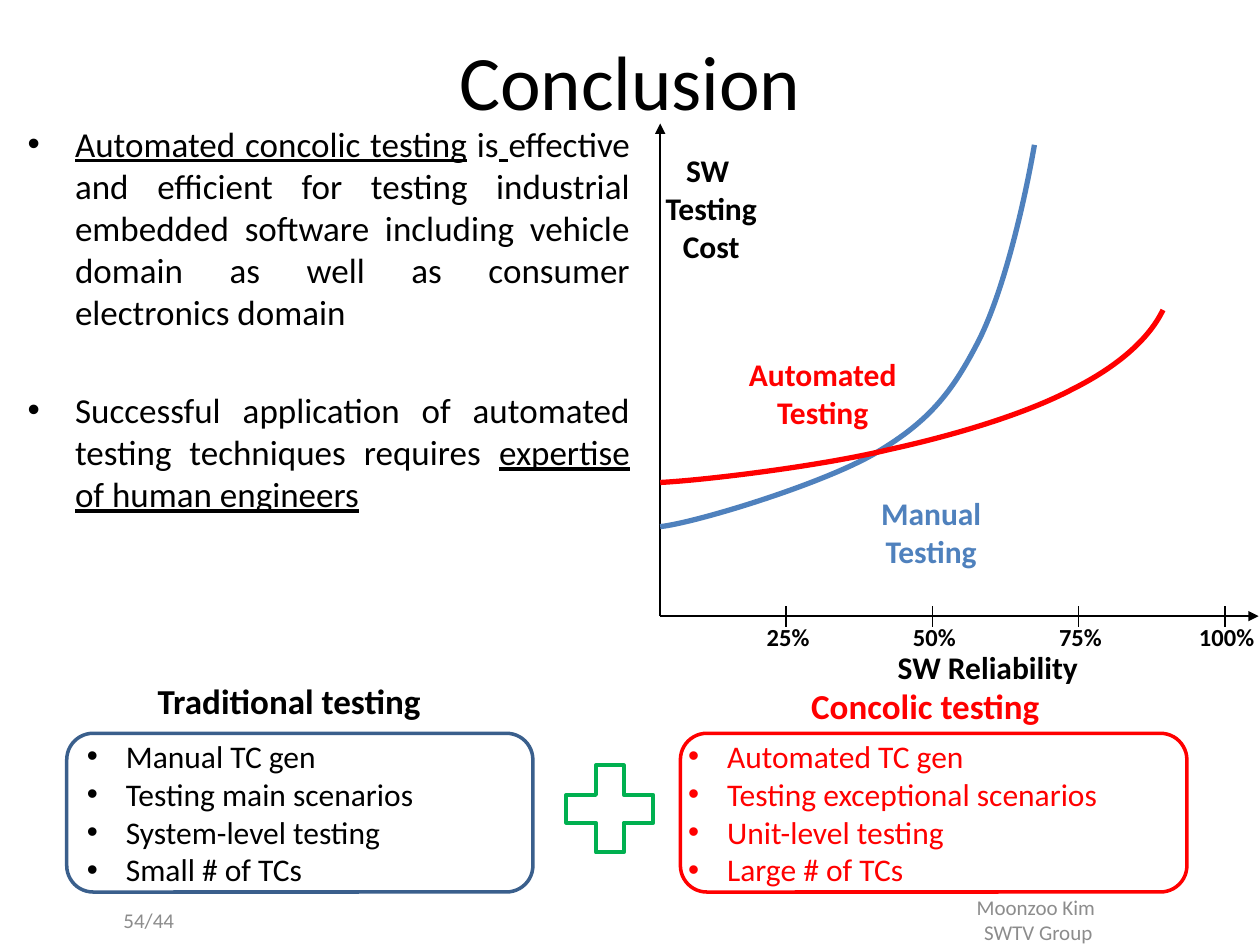
from lxml.etree import SubElement
from pptx import Presentation
from pptx.dml.color import RGBColor
from pptx.enum.shapes import MSO_CONNECTOR, MSO_SHAPE as Preset
from pptx.enum.text import MSO_ANCHOR as Anchor, MSO_AUTO_SIZE as AutoSize, PP_ALIGN as Align
from pptx.oxml.ns import qn
from pptx.util import Emu, Inches, Pt

BLACK, RED, BLUE, NAVY, GREEN, GREY = "000000", "FF0000", "4F81BD", "3A5F8C", "00B050", "8C8C8C"
rgb = RGBColor.from_string

deck = Presentation()
deck.slide_width, deck.slide_height = Inches(10), Inches(7.5)
CELL = deck.slide_width // 1000  # the grid has 1000 columns and 750 rows
slide = deck.slides.add_slide(deck.slide_layouts[1])
shapes = slide.shapes


def cells(*counts):
    return [Emu(round(count * CELL)) for count in counts]


def write(holder, lines, color, frame_format, align=Align.LEFT, **font_format):
    """Fill a shape with one paragraph per line; a line is a list of (text, underline)."""
    frame = holder.text_frame
    for name, value in frame_format.items():
        setattr(frame, name, value)
    for number, line in enumerate(lines):
        paragraph = frame.paragraphs[0] if number == 0 else frame.add_paragraph()
        paragraph.alignment = align
        for text, underline in [(line, False)] if isinstance(line, str) else line:
            run = paragraph.add_run()
            run.text = text
            run.font.color.rgb = rgb(color)
            for name, value in {"name": "Calibri", "underline": underline, **font_format}.items():
                setattr(run.font, name, value)
    return frame.paragraphs


# Title and main points
title, points = shapes.title, slide.placeholders[1]
for holder, box in ((title, (0, 16, 1000, 94)), (points, (12, 92, 498, 570))):
    holder.left, holder.top, holder.width, holder.height = cells(*box)
write(title, ["Conclusion"], BLACK, {"vertical_anchor": Anchor.MIDDLE}, Align.CENTER, size=Pt(44))
findings = [
    [("Automated concolic testing", True), (" is", False), (" ", True),
     ("effective and efficient for testing industrial embedded software including "
      "vehicle domain as well as consumer electronics domain", False)],
    [("Successful application of automated testing techniques requires ", False),
     ("expertise of human engineers", True)],
]
paragraphs = write(points, findings, BLACK, {"auto_size": AutoSize.NONE}, Align.JUSTIFY, size=Pt(20))
for paragraph, gap in zip(paragraphs, (4, 32)):
    paragraph.space_before = Pt(gap)

# Footer
for lines, box, align in (
    (["Moonzoo Kim ", "SWTV Group"], (750, 710, 148, 40), Align.CENTER),
    (["54/44"], (50, 710, 98, 40), Align.RIGHT),
):
    write(shapes.add_textbox(*cells(*box)), lines, GREY,
          {"vertical_anchor": Anchor.MIDDLE, "word_wrap": True}, align, size=Pt(12))

# Two kinds of testing, joined by a plus
for items, box, outline, color, inset in (
    (["Manual TC gen", "Testing main scenarios", "System-level testing", "Small # of TCs"],
     (53, 582, 370, 126), NAVY, BLACK, 10),
    (["Automated TC gen", "Testing exceptional scenarios", "Unit-level testing", "Large # of TCs"],
     (540, 582, 402, 126), RED, RED, 0),
):
    panel = shapes.add_shape(Preset.ROUNDED_RECTANGLE, *cells(*box))
    panel.shadow.inherit = False
    panel.fill.background()
    panel.line.color.rgb, panel.line.width = rgb(outline), Pt(2)
    side = cells(inset)[0]
    frame_format = {"vertical_anchor": Anchor.MIDDLE, "word_wrap": True,
                    "margin_left": side, "margin_right": side}
    for paragraph in write(panel, items, color, frame_format, size=Pt(18)):
        properties = paragraph._p.get_or_add_pPr()
        properties.set("marL", str(31 * CELL))
        properties.set("indent", str(-31 * CELL))
        SubElement(properties, qn("a:buFont"), typeface="Arial")
        SubElement(properties, qn("a:buChar"), char="•")

plus = shapes.add_shape(Preset.MATH_PLUS, *cells(437, 595, 94, 94))
plus.shadow.inherit = False
plus.fill.background()
plus.line.color.rgb, plus.line.width = rgb(GREEN), Pt(2.25)

# Axes and ticks
ORIGIN_X, ORIGIN_Y = 524, 489
ticks = [(ORIGIN_X + 100 + 116 * step, f"{25 * (step + 1)}%") for step in range(4)]
axis_ends = [(999, ORIGIN_Y), (ORIGIN_X, 98)]
strokes = [(ORIGIN_X, ORIGIN_Y, *end, True) for end in axis_ends]
strokes += [(x, 481, x, 498, False) for x, _ in ticks]
for *ends, has_arrow in strokes:
    stroke = shapes.add_connector(MSO_CONNECTOR.STRAIGHT, *cells(*ends))
    stroke.line.color.rgb, stroke.line.width = rgb(BLACK), Pt(1)
    if has_arrow:
        SubElement(stroke.line._get_or_add_ln(), qn("a:tailEnd"), type="triangle")
    SubElement(stroke._element.spPr, qn("a:effectLst"))

# Cost curves: a start, then two control points and an end for each segment
for color, start, bends in (
    (BLUE, (524, 418), [(552, 415), (654, 384), (696, 359), (738, 334), (756, 311), (777, 270),
                        (797, 230), (813, 161), (821, 115)]),
    (RED, (524, 383), [(561, 381), (651, 370), (705, 357), (760, 345), (815, 328), (851, 309),
                       (887, 291), (912, 269), (923, 246)]),
):
    builder = shapes.build_freeform(*start, scale=CELL)
    builder.add_line_segments(bends, close=False)
    curve = builder.convert_to_shape()
    curve.shadow.inherit = False
    curve.fill.background()
    curve.line.color.rgb, curve.line.width = rgb(color), Pt(3)
    outline = curve._element.find(".//" + qn("a:path"))
    segments = outline.findall(qn("a:lnTo"))
    for first in range(0, len(segments), 3):
        bend = SubElement(outline, qn("a:cubicBezTo"))
        for segment in segments[first:first + 3]:
            bend.append(segment[0])
            outline.remove(segment)

# Headings and chart labels
labels = [
    (["Traditional testing"], (114, 534, 231, 44), 20, BLACK),
    (["Concolic testing"], (633, 538, 203, 44), 20, RED),
    (["SW Reliability"], (702, 509, 164, 40), 18, BLACK),
    (["SW ", "Testing", "Cost"], (518, 115, 93, 101), 18, BLACK),
    (["Manual", "Testing"], (665, 387, 148, 71), 18, BLUE),
    (["Automated", "Testing"], (571, 277, 164, 71), 18, RED),
]
labels += [([percent], (x - 31, 489, 65, 34), 14, BLACK) for x, percent in ticks]
for lines, box, size, color in labels:
    write(shapes.add_textbox(*cells(*box)), lines, color,
          {"word_wrap": False, "auto_size": AutoSize.SHAPE_TO_FIT_TEXT},
          Align.CENTER, size=Pt(size), bold=True)

deck.save("out.pptx")
